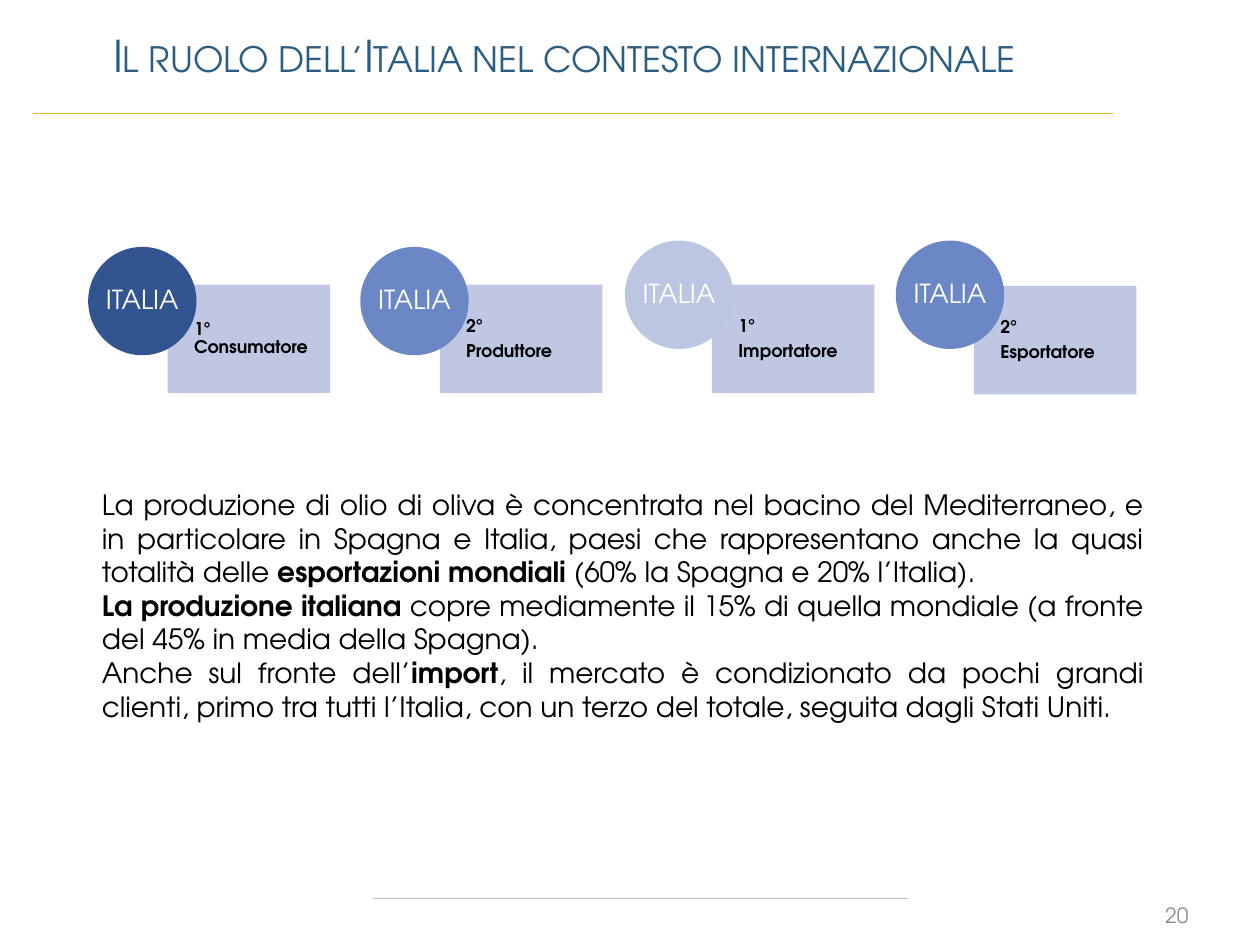
from lxml import etree
from pptx import Presentation
from pptx.dml.color import RGBColor
from pptx.enum.shapes import MSO_CONNECTOR, MSO_SHAPE
from pptx.enum.text import MSO_ANCHOR, PP_ALIGN
from pptx.oxml.ns import qn
from pptx.util import Inches, Pt

RECTANGLE, OVAL = MSO_SHAPE.RECTANGLE, MSO_SHAPE.OVAL
STRAIGHT = MSO_CONNECTOR.STRAIGHT
MIDDLE, TOP = MSO_ANCHOR.MIDDLE, MSO_ANCHOR.TOP
LEFT, CENTER = PP_ALIGN.LEFT, PP_ALIGN.CENTER
RIGHT, JUSTIFY = PP_ALIGN.RIGHT, PP_ALIGN.JUSTIFY

FONT = "TeX Gyre Adventor"
BLACK = RGBColor(0x00, 0x00, 0x00)
WHITE = RGBColor(0xFF, 0xFF, 0xFF)
TITLE_BLUE = RGBColor(0x2B, 0x5C, 0x82)
GOLD = RGBColor(0xED, 0xBC, 0x20)
RULE_GREY = RGBColor(0xBF, 0xBF, 0xBF)
NUMBER_GREY = RGBColor(0x8C, 0x8C, 0x8C)
CARD_BLUE = RGBColor(0xB9, 0xC2, 0xE1)
DARK_BLUE = RGBColor(0x32, 0x54, 0x91)
MID_BLUE = RGBColor(0x6C, 0x87, 0xC5)
PALE_BLUE = RGBColor(0xBC, 0xC6, 0xE2)

COLUMNS, ROWS = 100, 75
CELL = Inches(0.1)
BADGE_SIZE = 8.6
CARD_WIDTH, CARD_HEIGHT = 12.9, 8.6
CARD_STEP = 21.6

RANKS = [
    (["1° Consumatore"], DARK_BLUE, (0, 0), (-6.3, -3)),
    (["2°", "Produttore"], MID_BLUE, (0, 0), (-6.3, -3)),
    (["1°", "Importatore"], PALE_BLUE, (0, 0), (-6.9, -3.5)),
    (["2°", "Esportatore"], MID_BLUE, (-0.8, 0.1), (-6.2, -3.6)),
]

BODY = [
    [("La produzione di olio di oliva è concentrata nel bacino del Mediterraneo, "
      "e in particolare in Spagna e Italia, paesi che rappresentano anche la "
      "quasi totalità delle ", False),
     ("esportazioni mondiali ", True),
     ("(60% la Spagna e 20% l’Italia).", False)],
    [("La produzione italiana ", True),
     ("copre mediamente il 15% di quella mondiale (a fronte del 45% in media "
      "della Spagna).", False)],
    [("Anche sul fronte dell’", False),
     ("import", True),
     (", il mercato è condizionato da pochi grandi clienti, primo tra tutti "
      "l’Italia, con un terzo del totale, seguita dagli Stati Uniti.", False)],
]


def cells(*values):
    """Turn grid cells into slide lengths."""
    return [round(value * CELL) for value in values]


def set_frame(text_frame, anchor, margins=(1, 0.5, 1, 0.5)):
    """Set wrapping, anchor and margins (left, top, right, bottom)."""
    text_frame.word_wrap = True
    text_frame.vertical_anchor = anchor
    (text_frame.margin_left, text_frame.margin_top,
     text_frame.margin_right, text_frame.margin_bottom) = cells(*margins)


def write(text_frame, paragraphs, size, color, alignment, spacing=1, after=0):
    """Fill a frame with paragraphs made of (text, bold) runs."""
    for index, runs in enumerate(paragraphs):
        paragraph = text_frame.add_paragraph() if index else text_frame.paragraphs[0]
        paragraph.alignment = alignment
        paragraph.line_spacing = spacing
        paragraph.space_before = Pt(0)
        paragraph.space_after = Pt(after)
        for text, bold in runs:
            run = paragraph.add_run()
            run.text = text
            run.font.name = FONT
            run.font.size = Pt(size)
            run.font.bold = bold
            run.font.color.rgb = color


def add_rule(slide, left, right, top, color, width):
    """Draw a thin horizontal rule."""
    rule = slide.shapes.add_connector(STRAIGHT, *cells(left, top, right, top))
    rule.line.color.rgb = color
    rule.line.width = Pt(width)
    etree.SubElement(rule._element.spPr, qn("a:effectLst"))


def add_filled_shape(slide, kind, box, color):
    """Add a flat shape without an outline."""
    shape = slide.shapes.add_shape(kind, *cells(*box))
    shape.shadow.inherit = False
    shape.fill.solid()
    shape.fill.fore_color.rgb = color
    shape.line.fill.background()
    return shape


def add_title(slide, box):
    """Place the small-caps title in its placeholder."""
    title = slide.shapes.title
    title.left, title.top, title.width, title.height = cells(*box)
    set_frame(title.text_frame, MIDDLE)
    write(title.text_frame, [[("Il ruolo dell’Italia nel contesto internazionale", False)]],
          25, TITLE_BLUE, CENTER, 0.9)
    title.text_frame.paragraphs[0].runs[0].font._element.set("cap", "small")


def add_text(slide, box, anchor, paragraphs, size, color, alignment):
    """Add a text box."""
    text_box = slide.shapes.add_textbox(*cells(*box))
    set_frame(text_box.text_frame, anchor)
    write(text_box.text_frame, paragraphs, size, color, alignment)


def add_rank_card(slide, left, top, lines, badge_color, badge_offset):
    """Add a rank card overlapped by its round country badge."""
    card = add_filled_shape(slide, RECTANGLE, (left, top, CARD_WIDTH, CARD_HEIGHT), CARD_BLUE)
    color_element = card._element.spPr.find(f"{qn('a:solidFill')}/{qn('a:srgbClr')}")
    etree.SubElement(color_element, qn("a:alpha"), val="90000")
    set_frame(card.text_frame, MIDDLE, (2.1, 0.8, 0.8, 0.8))
    write(card.text_frame, [[(line, True)] for line in lines], 10, BLACK, LEFT, 0.9, 3.5)

    badge_box = (left + badge_offset[0], top + badge_offset[1], BADGE_SIZE, BADGE_SIZE)
    badge = add_filled_shape(slide, OVAL, badge_box, badge_color)
    set_frame(badge.text_frame, MIDDLE, (0, 0, 0, 0))
    write(badge.text_frame, [[("ITALIA", False)]], 15, WHITE, CENTER, 0.9)


def add_rank_row(slide, left, top):
    """Lay out the rank cards in equal steps with their small shifts."""
    for index, (lines, color, shift, badge_offset) in enumerate(RANKS):
        add_rank_card(slide, left + index * CARD_STEP + shift[0], top + shift[1],
                      lines, color, badge_offset)


def main():
    """Build and save the slide."""
    presentation = Presentation()
    presentation.slide_width, presentation.slide_height = cells(COLUMNS, ROWS)
    slide = presentation.slides.add_slide(presentation.slide_layouts[5])
    add_rule(slide, 29.6, 72.1, 71.3, RULE_GREY, 0.25)
    add_rule(slide, 2.6, 88.3, 9, GOLD, 0.5)
    add_title(slide, (1.3, 1.9, 87, 5.5))
    add_text(slide, (90.9, 71.3, 4.4, 2.6), MIDDLE, [[("20", False)]], 12, NUMBER_GREY, RIGHT)
    add_rank_row(slide, 13.3, 22.6)
    add_text(slide, (7.1, 38.2, 84.7, 19.9), TOP, BODY, 16, BLACK, JUSTIFY)
    presentation.save("out.pptx")


if __name__ == "__main__":
    main()
